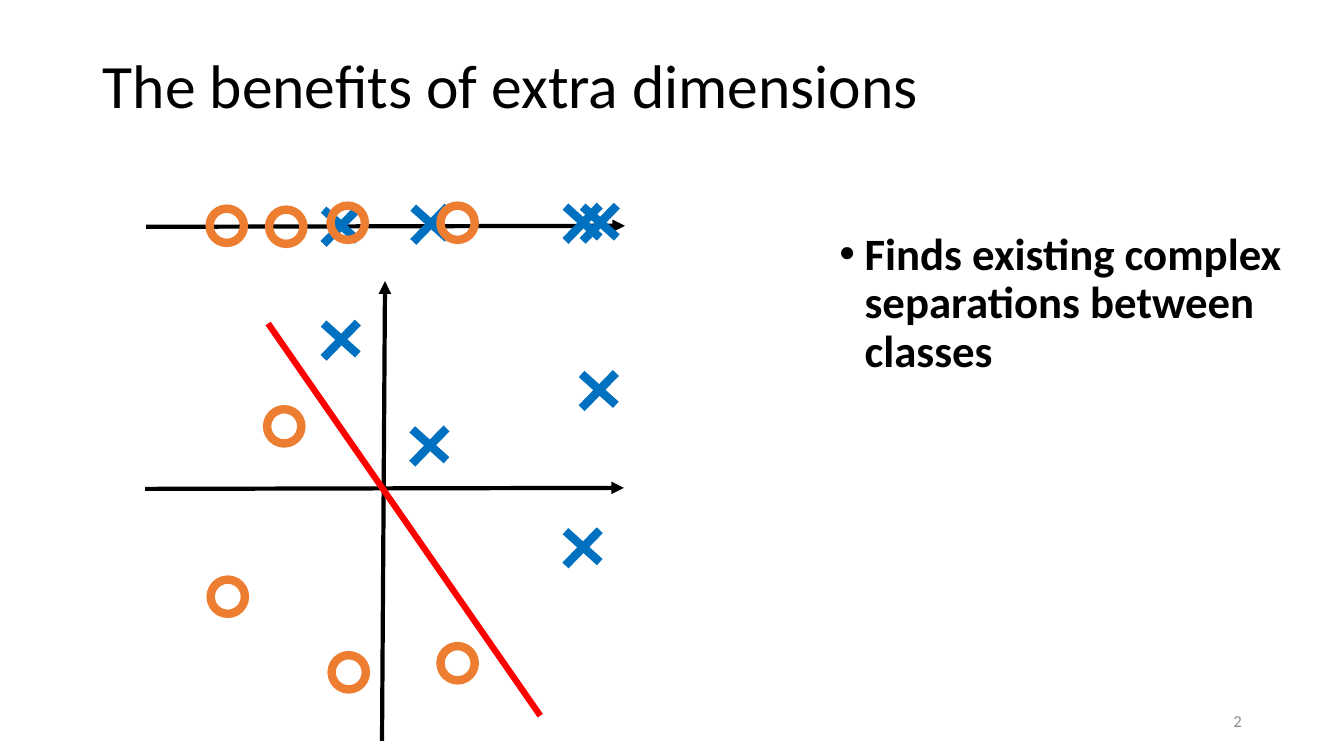
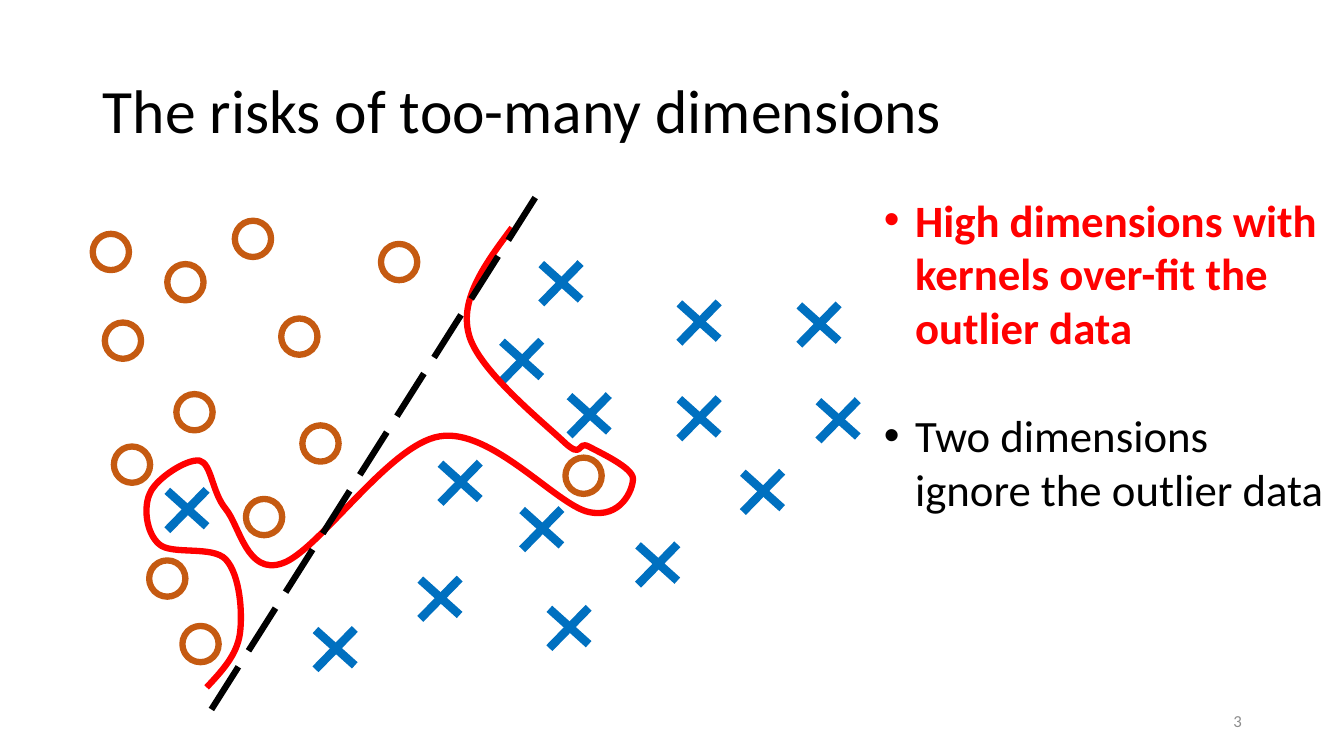
"""Build two slides on the gains and risks of extra dimensions."""
from dataclasses import dataclass
from typing import Any

from lxml import etree
from pptx import Presentation
from pptx.dml.color import RGBColor
from pptx.enum.dml import MSO_LINE
from pptx.enum.shapes import MSO_CONNECTOR, MSO_SHAPE
from pptx.enum.text import MSO_ANCHOR, MSO_AUTO_SIZE, PP_ALIGN
from pptx.oxml.ns import qn
from pptx.util import Inches, Pt

STRAIGHT = MSO_CONNECTOR.STRAIGHT
OVAL = MSO_SHAPE.OVAL
LONG_DASH = MSO_LINE.LONG_DASH
LEFT, RIGHT = PP_ALIGN.LEFT, PP_ALIGN.RIGHT
TOP, MIDDLE = MSO_ANCHOR.TOP, MSO_ANCHOR.MIDDLE
NO_FIT = MSO_AUTO_SIZE.NONE

FONT = "Calibri"
BLACK, RED, BLUE, GREY = "000000", "FF0000", "0070C0", "8C8C8C"
ORANGE, RUST = "ED7D31", "C55A11"

Point = tuple[float, float]


@dataclass(frozen=True)
class Stroke:
    """A straight line and its format."""
    start: Point
    end: Point
    hue: str = BLACK
    width: float = 3
    arrow: bool = False
    dashed: bool = False


@dataclass(frozen=True)
class Ring:
    """The format of a hollow ring."""
    size: float
    hue: str
    width: float


PLANE_AXES = [Stroke((3.79, 7.35), (3.82, 2.79), arrow=True),
              Stroke((1.44, 4.85), (6.19, 4.84), arrow=True)]
FLAT_AXIS = Stroke((1.45, 2.25), (6.2, 2.24), arrow=True)
SPLIT = Stroke((2.66, 3.21), (5.36, 7.1), RED, 4.5)
BORDER = Stroke((5.31, 1.96), (2.09, 7.05), width=4.5, dashed=True)
BOLD_RING = Ring(0.34, ORANGE, 6)
THIN_RING = Ring(0.36, RUST, 4.5)

PLANE_CROSSES: list[Point] = [
    (4.09, 4.26), (3.21, 3.21), (5.77, 3.71), (5.61, 5.27)]
FLAT_CROSSES: list[Point] = [
    (4.1, 2.06), (3.21, 2.08), (5.78, 2.05), (5.61, 2.05)]
GAIN_RINGS: list[Point] = [
    (2.08, 2.07), (2.67, 2.08), (3.28, 2.04), (4.37, 2.04),
    (2.65, 4.06), (2.09, 5.75), (3.29, 6.5), (4.37, 6.41)]
RISK_CROSSES: list[Point] = [
    (4.37, 4.6), (4.98, 3.39), (5.37, 2.62), (6.33, 5.41), (3.13, 6.25),
    (5.65, 3.93), (4.17, 5.75), (5.45, 6.04), (5.18, 5.06), (8.12, 3.98),
    (6.74, 3.01), (7.37, 4.69), (1.66, 4.87), (6.74, 3.96), (7.93, 3.03)]
RISK_RINGS: list[Point] = [
    (2.79, 3.16), (2.44, 4.95), (3, 4.22), (1.75, 3.91), (1.48, 5.56),
    (1.13, 4.43), (0.92, 2.32), (1.81, 6.21), (3.78, 2.42), (5.61, 4.54),
    (2.33, 2.19), (1.04, 3.2), (1.66, 2.62)]
BENDS: list[Point] = [
    (5.08, 2.26),
    (4.82, 2.61), (4.56, 2.96), (4.65, 3.31),
    (4.73, 3.66), (5.39, 4.19), (5.59, 4.38),
    (5.79, 4.57), (5.72, 4.37), (5.84, 4.43),
    (5.95, 4.49), (6.28, 4.64), (6.28, 4.75),
    (6.28, 4.86), (6.16, 5.15), (5.84, 5.08),
    (5.52, 5.01), (4.87, 4.24), (4.36, 4.33),
    (3.86, 4.41), (3.16, 5.47), (2.8, 5.59),
    (2.45, 5.71), (2.38, 5.22), (2.24, 5.05),
    (2.1, 4.88), (2.1, 4.6), (1.98, 4.57),
    (1.85, 4.55), (1.55, 4.75), (1.49, 4.89),
    (1.42, 5.03), (1.45, 5.29), (1.58, 5.4),
    (1.7, 5.51), (2.11, 5.41), (2.24, 5.55),
    (2.38, 5.7), (2.41, 6.08), (2.38, 6.29),
    (2.35, 6.5), (2.2, 6.66), (2.05, 6.82),
]


def paint(target: Any, hue: str) -> None:
    """Set a line or font to a hex colour."""
    target.fill.solid()
    target.fill.fore_color.rgb = RGBColor.from_string(hue)


def write(par: Any, text: str, *, size: float, hue: str = BLACK,
          bold: bool = False, align: Any = LEFT, lines: float = 1,
          before: float = 0, indent: float = 0) -> None:
    """Fill a paragraph with formatted text, with a bullet if indented."""
    run = par.add_run()
    run.text = text
    run.font.name, run.font.size, run.font.bold = FONT, Pt(size), bold
    paint(run.font, hue)
    par.alignment, par.line_spacing = align, lines
    par.space_before = Pt(before)
    if indent:
        props = par._p.get_or_add_pPr()
        props.set("marL", str(Inches(indent)))
        props.set("indent", str(-Inches(indent)))
        etree.SubElement(props, qn("a:buFont")).set("typeface", "Arial")
        etree.SubElement(props, qn("a:buChar")).set("char", "•")


def place(shape: Any, x: float, y: float, wide: float, high: float,
          anchor: Any = TOP) -> Any:
    """Set a text shape's bounds and return its frame."""
    shape.left, shape.top = Inches(x), Inches(y)
    shape.width, shape.height = Inches(wide), Inches(high)
    frame = shape.text_frame
    frame.word_wrap, frame.auto_size = True, NO_FIT
    frame.vertical_anchor = anchor
    return frame


def add_box(slide: Any, x: float, y: float, wide: float, high: float,
            anchor: Any = TOP) -> Any:
    """Add a text box and return its frame."""
    return place(slide.shapes.add_textbox(0, 0, 0, 0), x, y, wide, high, anchor)


def add_slide(deck: Any, title: str, top: float, number: int) -> Any:
    """Add a slide with its title and number."""
    slide = deck.slides.add_slide(deck.slide_layouts[5])
    head = place(slide.shapes.title, 0.92, top, 11.5, 1.45, MIDDLE)
    write(head.paragraphs[0], title, size=44, lines=0.9)
    foot = add_box(slide, 9.42, 6.95, 3, 0.4, MIDDLE)
    write(foot.paragraphs[0], str(number), size=12, hue=GREY, align=RIGHT)
    return slide


def draw_line(shapes: Any, stroke: Stroke) -> None:
    """Draw a straight line without a shadow."""
    line = shapes.add_connector(STRAIGHT, *map(Inches, stroke.start + stroke.end))
    paint(line.line, stroke.hue)
    line.line.width = Pt(stroke.width)
    if stroke.dashed:
        line.line.dash_style = LONG_DASH
    props = line._element.spPr
    if stroke.arrow:
        edge = props.find(qn("a:ln"))
        etree.SubElement(edge, qn("a:tailEnd")).set("type", "triangle")
    etree.SubElement(props, qn("a:effectLst"))


def draw_crosses(slide: Any, spots: list[Point], size: float) -> None:
    """Draw each cross as a group of two lines."""
    for x, y in spots:
        group = slide.shapes.add_group_shape().shapes
        draw_line(group, Stroke((x, y), (x + size, y + 0.9 * size), BLUE, 6))
        draw_line(group, Stroke((x, y + size), (x + size, y - 0.01), BLUE, 6))


def outline(shape: Any, hue: str, width: float) -> None:
    """Leave a shape hollow with a plain outline."""
    shape.shadow.inherit = False
    shape.fill.background()
    paint(shape.line, hue)
    shape.line.width = Pt(width)


def draw_rings(slide: Any, spots: list[Point], ring: Ring) -> None:
    """Draw a hollow ring at each spot."""
    for x, y in spots:
        shape = slide.shapes.add_shape(
            OVAL, *map(Inches, (x, y, ring.size, ring.size)))
        outline(shape, ring.hue, ring.width)


def draw_curve(slide: Any, bends: list[Point]) -> None:
    """Draw an open curve, each three points after the first one cubic bend."""
    start, *rest = [(Inches(x), Inches(y)) for x, y in bends]
    form = slide.shapes.build_freeform(*start)
    form.add_line_segments(rest, close=False)
    shape = form.convert_to_shape()
    legs = list(shape._element.iter(qn("a:lnTo")))
    for first, second, third in zip(legs[::3], legs[1::3], legs[2::3]):
        bend = etree.Element(qn("a:cubicBezTo"))
        first.addprevious(bend)
        for leg in (first, second, third):
            bend.append(leg[0])
            leg.getparent().remove(leg)
    outline(shape, RED, 4.5)


def build_gains(deck: Any) -> None:
    """Build the slide on the benefits."""
    slide = add_slide(deck, "The benefits of extra dimensions", 0.15, 2)
    body = add_box(slide, 8.23, 2.25, 4.93, 4.51)
    write(body.paragraphs[0], "Finds existing complex separations between classes",
          size=32, bold=True, lines=0.9, before=10, indent=0.25)
    for axis in PLANE_AXES:
        draw_line(slide.shapes, axis)
    draw_crosses(slide, PLANE_CROSSES, 0.34)
    draw_line(slide.shapes, SPLIT)
    draw_line(slide.shapes, FLAT_AXIS)
    draw_crosses(slide, FLAT_CROSSES, 0.34)
    draw_rings(slide, GAIN_RINGS, BOLD_RING)


def build_risks(deck: Any) -> None:
    """Build the slide on the risks."""
    slide = add_slide(deck, "The risks of too-many dimensions", 0.4, 3)
    draw_crosses(slide, RISK_CROSSES, 0.39)
    draw_rings(slide, RISK_RINGS, THIN_RING)
    draw_curve(slide, BENDS)
    draw_line(slide.shapes, BORDER)
    body = add_box(slide, 8.67, 1.86, 4.66, 3.33)
    write(body.paragraphs[0], "High dimensions with kernels over-fit the outlier data",
          size=32, hue=RED, bold=True, indent=0.31)
    write(body.add_paragraph(), "Two dimensions ignore the outlier data",
          size=32, before=38.5, indent=0.31)


def main() -> None:
    """Build and save the deck."""
    deck = Presentation()
    deck.slide_width, deck.slide_height = Inches(40 / 3), Inches(7.5)
    build_gains(deck)
    build_risks(deck)
    deck.save("out.pptx")


if __name__ == "__main__":
    main()
